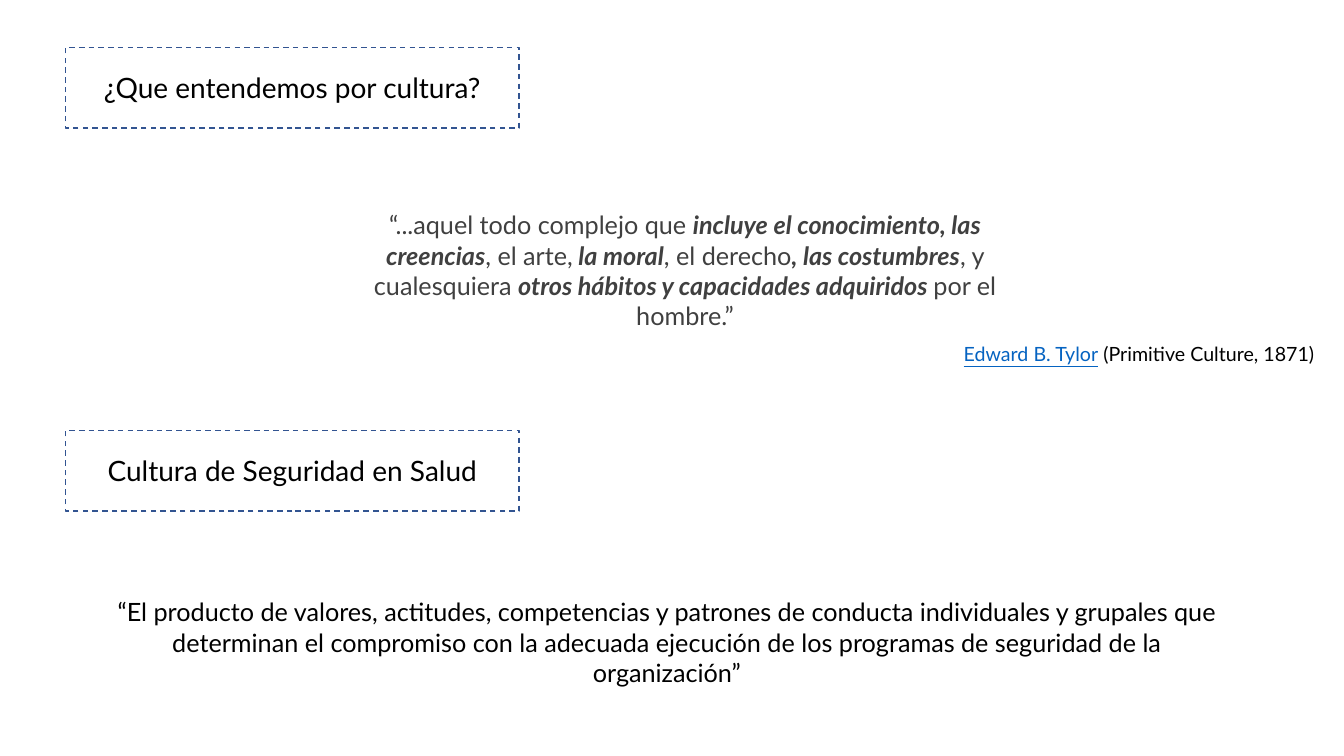
from pptx import Presentation
from pptx.dml.color import RGBColor
from pptx.enum.dml import MSO_LINE
from pptx.enum.shapes import MSO_SHAPE
from pptx.enum.text import MSO_ANCHOR, PP_ALIGN
from pptx.util import Inches, Pt

BLACK = RGBColor(0x00, 0x00, 0x00)
GRAY = RGBColor(0x40, 0x40, 0x40)
BLUE = RGBColor(0x32, 0x54, 0x91)
LINK = RGBColor(0x05, 0x63, 0xC1)
RECT = MSO_SHAPE.RECTANGLE
DASH = MSO_LINE.DASH
CENTER = PP_ALIGN.CENTER
LEFT = PP_ALIGN.LEFT
MIDDLE = MSO_ANCHOR.MIDDLE
TOP = MSO_ANCHOR.TOP
FONT = "Lato"

QUOTE = [
    "“...aquel todo complejo que ",
    "incluye el conocimiento, las creencias",
    ", el arte,",
    " la moral",
    ", el derecho",
    ", las costumbres",
    ", y cualesquiera ",
    "otros hábitos y capacidades adquiridos ",
    "por el hombre.”",
]
SAFETY = (
    "“El producto de valores, actitudes, competencias y patrones de conducta "
    "individuales y grupales que determinan el compromiso con la adecuada "
    "ejecución de los programas de seguridad de la organización”"
)


def fill_text(shape, parts, size, color, align=CENTER, anchor=TOP, wrap=True):
    """Write the parts as runs of one paragraph and return the runs."""
    frame = shape.text_frame
    frame.word_wrap = wrap
    frame.vertical_anchor = anchor
    para = frame.paragraphs[0]
    para.alignment = align
    for part in parts:
        run = para.add_run()
        run.text = part
        run.font.name = FONT
        run.font.size = Pt(size)
        run.font.color.rgb = color
    return para.runs


def add_text(slide, box, parts, size, color, **layout):
    """Add a text box and return its runs."""
    shape = slide.shapes.add_textbox(*map(Inches, box))
    return fill_text(shape, parts, size, color, **layout)


def add_title(slide, top, text):
    """Add a dashed frame with a centred heading."""
    shape = slide.shapes.add_shape(
        RECT, Inches(0.65), Inches(top), Inches(4.5), Inches(0.8))
    shape.shadow.inherit = False
    shape.fill.background()
    shape.line.color.rgb = BLUE
    shape.line.width = Pt(1)
    shape.line.dash_style = DASH
    fill_text(shape, [text], 20, BLACK, anchor=MIDDLE)


def main():
    """Build the slide on culture and safety."""
    deck = Presentation()
    deck.slide_width = Inches(13.33)
    deck.slide_height = Inches(7.5)
    slide = deck.slides.add_slide(deck.slide_layouts[6])

    quote = add_text(slide, (3.46, 2.03, 6.67, 1.31), QUOTE, 18, GRAY)
    for run in quote[1::2]:
        run.font.bold = True
        run.font.italic = True

    author = add_text(
        slide, (9.46, 3.34, 3.82, 0.34),
        ["Edward B. Tylor", " (Primitive Culture, 1871)"],
        14, BLACK, align=LEFT, wrap=False)[0]
    author.font.color.rgb = LINK
    author.font.underline = True

    add_title(slide, 0.47, "¿Que entendemos por cultura?")
    add_title(slide, 4.27, "Cultura de Seguridad en Salud")
    add_text(slide, (0.88, 5.57, 11.47, 1.6), [SAFETY], 18, BLACK,
             anchor=MIDDLE)
    deck.save("out.pptx")


if __name__ == "__main__":
    main()
